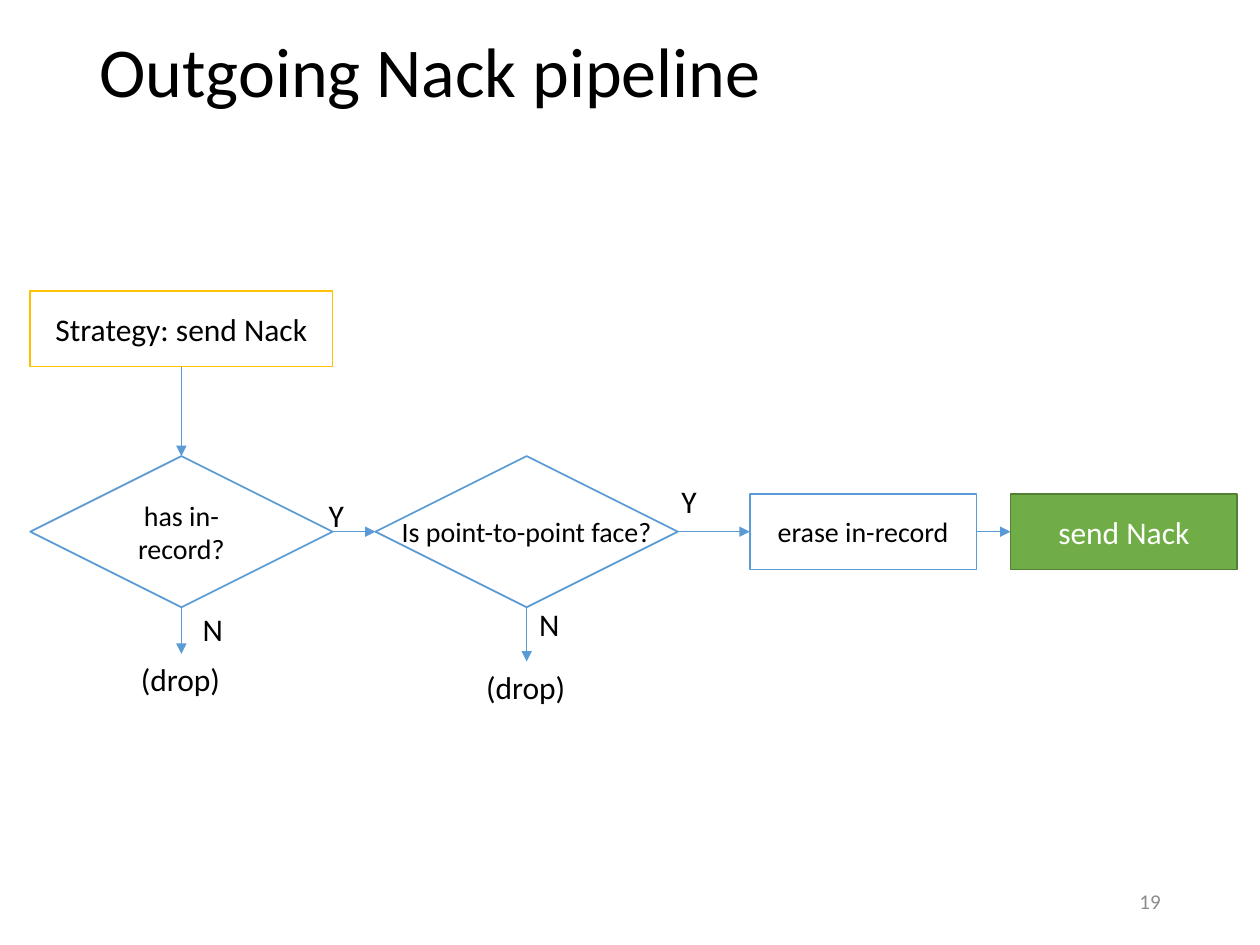
from lxml.etree import SubElement
from pptx import Presentation
from pptx.dml.color import RGBColor
from pptx.enum.shapes import MSO_CONNECTOR as Line, MSO_SHAPE as Shape
from pptx.enum.text import MSO_ANCHOR as Anchor, MSO_AUTO_SIZE as Fit, PP_ALIGN as Align
from pptx.oxml.ns import qn
from pptx.util import Inches, Pt

COLORS = {
    "white": "FFFFFF", "black": "000000", "gray": "8C8C8C", "blue": "5B9BD5",
    "gold": "FFC000", "green": "70AD47", "dark green": "538035",
}
FONT = "Calibri"
CELL = Inches(0.1)  # the slide is a grid of 100 columns by 75 rows
COLUMNS, ROWS = 100, 75
TOP, LEFT, BOTTOM, RIGHT = range(4)


def color(name):
    return RGBColor.from_string(COLORS[name])


def place(box, column, row, width, height):
    """Turn grid cells, counted from the corner of box, into slide lengths."""
    cells = (box[0] + column, box[1] + row, width, height)
    return [round(cell * CELL) for cell in cells]


def write(shape, text, size, name="black", align=Align.LEFT, anchor=Anchor.MIDDLE, wrap=True):
    frame = shape.text_frame
    frame.text = text
    frame.word_wrap = wrap
    frame.vertical_anchor = anchor
    para = frame.paragraphs[0]
    para.alignment = align
    font = para.runs[0].font
    font.name, font.size, font.color.rgb = FONT, Pt(size), color(name)


def add_step(page, area, text, size, line="blue", fill="white", ink="black",
             kind=Shape.RECTANGLE, wrap=True):
    step = page.shapes.add_shape(kind, *area)
    step.shadow.inherit = False
    step.fill.solid()
    step.fill.fore_color.rgb = color(fill)
    step.line.color.rgb = color(line)
    step.line.width = Pt(1)
    write(step, text, size, ink, Align.CENTER, wrap=wrap)
    return step


def add_label(page, area, text):
    label = page.shapes.add_textbox(*area)
    write(label, text, 18, anchor=Anchor.TOP, wrap=False)
    label.text_frame.auto_size = Fit.SHAPE_TO_FIT_TEXT
    return label


def add_arrow(page, start, start_side, end, end_side):
    arrow = page.shapes.add_connector(Line.STRAIGHT, 0, 0, 0, 0)
    arrow.begin_connect(start, start_side)
    arrow.end_connect(end, end_side)
    arrow.line.color.rgb = color("blue")
    arrow.line.width = Pt(0.5)
    SubElement(arrow.line._get_or_add_ln(), qn("a:tailEnd"), type="triangle")
    SubElement(arrow._element.spPr, qn("a:effectLst"))


def add_title(page, box):
    title = page.shapes.title
    title.left, title.top, title.width, title.height = place(box, 0, 0, *box[2:])
    write(title, "Outgoing Nack pipeline", 40)
    title.text_frame.paragraphs[0].line_spacing = 0.9


def add_pipeline(page, box):
    # Steps
    strategy = add_step(page, place(box, 0, 0, 24, 6), "Strategy: send Nack", 18, "gold")
    has_record = add_step(page, place(box, 0, 13.1, 24, 12), "has in-record?", 16,
                          kind=Shape.FLOWCHART_DECISION)
    is_point = add_step(page, place(box, 27.4, 13.1, 24, 12), "Is point-to-point face?", 16,
                        kind=Shape.FLOWCHART_DECISION, wrap=False)
    erase = add_step(page, place(box, 57.1, 16.1, 18, 6), "erase in-record", 16)
    send = add_step(page, place(box, 77.8, 16.1, 18, 6), "send Nack", 18,
                    "dark green", "green", "white")

    # Drop exits below the decisions
    drops = [add_label(page, place(box, column, row, 8.4, 4), "(drop)")
             for column, row in ((7.8, 28.8), (35.2, 29.4))]

    # Arrows down, then along the row
    for start, end in ((strategy, has_record), (has_record, drops[0]), (is_point, drops[1])):
        add_arrow(page, start, BOTTOM, end, TOP)
    for start, end in ((has_record, is_point), (is_point, erase), (erase, send)):
        add_arrow(page, start, RIGHT, end, LEFT)

    # Answers beside the arrows
    for text, column, row, width in (("N", 12.7, 24.8, 3.6), ("N", 39.4, 24.4, 3.6),
                                     ("Y", 22.7, 15.8, 3.2), ("Y", 50.7, 14.7, 3.3)):
        add_label(page, place(box, column, row, width, 4), text)


def add_page_number(page, box):
    number = page.shapes.add_textbox(*place(box, 0, 0, *box[2:]))
    write(number, "19", 12, "gray", Align.RIGHT)


def main():
    deck = Presentation()
    deck.slide_width, deck.slide_height = COLUMNS * CELL, ROWS * CELL
    page = deck.slides.add_slide(deck.slide_layouts.get_by_name("Title Only"))
    add_title(page, (6.9, 0.2, 86.2, 11.4))
    add_pipeline(page, (2.4, 23.1, 95.8, 33.4))
    add_page_number(page, (70.6, 69.5, 22.5, 4))
    deck.save("out.pptx")


if __name__ == "__main__":
    main()
